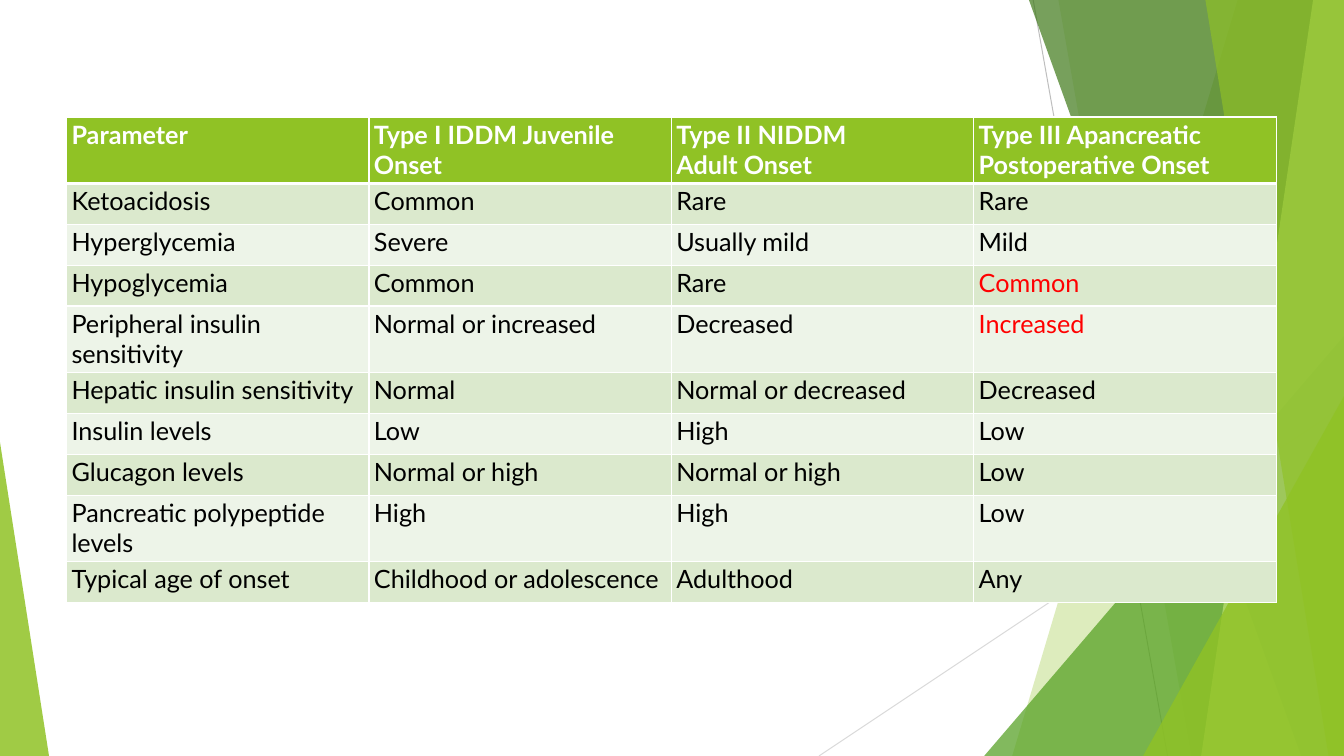
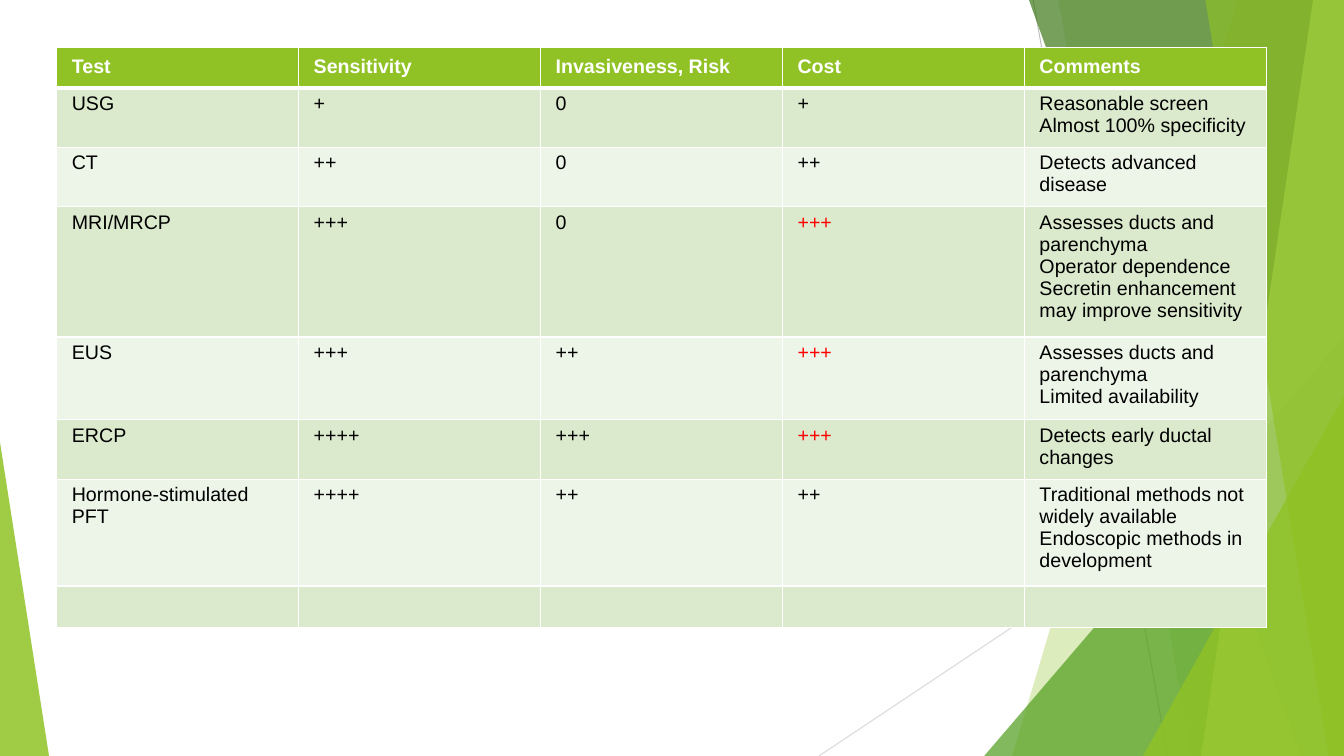
from dataclasses import dataclass

from lxml.etree import SubElement
from pptx import Presentation
from pptx.dml.color import RGBColor
from pptx.enum.shapes import MSO_CONNECTOR
from pptx.oxml.ns import qn
from pptx.util import Pt

SLIDE_WIDTH, SLIDE_HEIGHT = 960, 540
BLANK_LAYOUT = 6

WHITE = RGBColor(0xFF, 0xFF, 0xFF)
BLACK = RGBColor(0x00, 0x00, 0x00)
RED = RGBColor(0xFF, 0x00, 0x00)
GREEN = RGBColor(0x90, 0xC2, 0x25)
MID_GREEN = RGBColor(0x53, 0x9F, 0x20)
DARK_GREEN = RGBColor(0x3E, 0x78, 0x18)
LIME = RGBColor(0xC0, 0xE3, 0x74)
ODD_ROW = RGBColor(0xDB, 0xE9, 0xCD)
EVEN_ROW = RGBColor(0xED, 0xF4, 0xE8)
GRAY = RGBColor(0xBE, 0xBE, 0xBE)
LIGHT_GRAY = RGBColor(0xD9, 0xD9, 0xD9)

TOP_RIGHT, BOTTOM_RIGHT = (SLIDE_WIDTH, 0), (SLIDE_WIDTH, SLIDE_HEIGHT)

# Start, end, colour
BACKDROP_LINES = [
    ((738, 0), (834, 540), GRAY),
    ((960, 290), (585, 540), LIGHT_GRAY),
]

# Corners, colour, opacity in percent
BACKDROP_FACETS = [
    ([TOP_RIGHT, (884, 0), (723, 540), BOTTOM_RIGHT], GREEN, 30),
    ([TOP_RIGHT, (756, 0), (851, 540), BOTTOM_RIGHT], GREEN, 20),
    ([(960, 240), (703, 540), BOTTOM_RIGHT], MID_GREEN, 72),
    ([TOP_RIGHT, (735, 0), (929.5, 540), BOTTOM_RIGHT], DARK_GREEN, 70),
    ([TOP_RIGHT, (938, 0), (858, 540), BOTTOM_RIGHT], LIME, 70),
    ([TOP_RIGHT, (861, 0), (949, 540), BOTTOM_RIGHT], GREEN, 65),
    ([(960, 283), (816.5, 540), BOTTOM_RIGHT], GREEN, 80),
    ([(0, 316), (0, 540), (35, 540)], GREEN, 85),
]

DIABETES_TYPES = [
    ["Parameter", "Type I IDDM Juvenile Onset", "Type II NIDDM\vAdult Onset",
     "Type III Apancreatic Postoperative Onset"],
    ["Ketoacidosis", "Common", "Rare", "Rare"],
    ["Hyperglycemia", "Severe", "Usually mild", "Mild"],
    ["Hypoglycemia", "Common", "Rare", "Common"],
    ["Peripheral insulin\vsensitivity", "Normal or increased", "Decreased", "Increased"],
    ["Hepatic insulin sensitivity", "Normal", "Normal or decreased", "Decreased"],
    ["Insulin levels", "Low", "High", "Low"],
    ["Glucagon levels", "Normal or high", "Normal or high", "Low"],
    ["Pancreatic polypeptide levels", "High", "High", "Low"],
    ["Typical age of onset", "Childhood or adolescence", "Adulthood", "Any"],
]

PANCREATIC_TESTS = [
    ["Test", "Sensitivity", "Invasiveness, Risk", "Cost", "Comments"],
    ["USG", "+", "0", "+", "Reasonable screen\nAlmost 100% specificity"],
    ["CT", "++", "0", "++", "Detects advanced disease"],
    ["MRI/MRCP", "+++", "0", "+++",
     "Assesses ducts and parenchyma\nOperator dependence\n"
     "Secretin enhancement may improve sensitivity"],
    ["EUS", "+++", "++", "+++", "Assesses ducts and parenchyma\nLimited availability"],
    ["ERCP", "++++", "+++", "+++", "Detects early ductal changes"],
    ["Hormone-stimulated\vPFT", "++++", "++", "++",
     "Traditional methods not widely available\nEndoscopic methods in development"],
    ["", "", "", "", ""],
]


@dataclass
class TableStyle:
    font: str
    size: float
    indent: float
    header_gap: float
    body_gap: float


def add_backdrop_line(slide, start, end, color):
    line = slide.shapes.add_connector(
        MSO_CONNECTOR.STRAIGHT, *(Pt(value) for value in start + end))
    line.line.color.rgb = color
    line.line.width = Pt(0.72)
    SubElement(line.element.spPr, qn("a:effectLst"))
    return line


def add_facet(slide, corners, color, opacity):
    start, *others = [(Pt(x), Pt(y)) for x, y in corners]
    builder = slide.shapes.build_freeform(*start)
    builder.add_line_segments(others, close=True)
    facet = builder.convert_to_shape()
    facet.shadow.inherit = False
    facet.line.fill.background()
    facet.fill.solid()
    facet.fill.fore_color.rgb = color
    color_element = facet.element.spPr.find(qn("a:solidFill"))[0]
    SubElement(color_element, qn("a:alpha"), val=str(opacity * 1000))
    return facet


def move_backdrop_to_master(slide, master):
    """Draw the backdrop on a slide, then hand it to the master that all slides share."""
    parts = [add_backdrop_line(slide, *line) for line in BACKDROP_LINES]
    parts += [add_facet(slide, *facet) for facet in BACKDROP_FACETS]
    for position, part in enumerate(parts, start=2):
        master.shapes.element.insert(position, part.element)


def set_borders(cell, top, bottom):
    properties = cell._tc.get_or_add_tcPr()
    for side, width in (("L", 1), ("R", 1), ("T", top), ("B", bottom)):
        border = SubElement(properties, qn(f"a:ln{side}"), w=str(Pt(width)))
        fill = SubElement(border, qn("a:solidFill"))
        SubElement(fill, qn("a:srgbClr"), val=str(WHITE))


def fill_cell(cell, text, row, style, color):
    is_header = row == 0
    gap = Pt(style.header_gap if is_header else style.body_gap)
    cell.margin_left, cell.margin_top = Pt(style.indent), gap
    cell.margin_right = cell.margin_bottom = 0
    set_borders(cell, top=3 if row == 1 else 1, bottom=3 if is_header else 1)
    cell.fill.solid()
    cell.fill.fore_color.rgb = GREEN if is_header else ODD_ROW if row % 2 else EVEN_ROW
    cell.text_frame.text = text
    for paragraph in cell.text_frame.paragraphs:
        paragraph.font.name = style.font
        paragraph.font.size = Pt(style.size)
        paragraph.font.bold = is_header
        paragraph.font.color.rgb = color
    cell.text_frame.paragraphs[0].space_before = gap


def add_comparison(slide, content, left, top, heights, style, red_cells):
    """Add a table with a green header; red_cells holds (row, column) pairs."""
    columns = len(content[0])
    table = slide.shapes.add_table(
        len(content), columns, Pt(left), Pt(top), Pt(864), Pt(sum(heights))).table
    for column in table.columns:
        column.width = Pt(864 / columns)
    for row, (texts, height) in enumerate(zip(content, heights)):
        table.rows[row].height = Pt(height)
        for column, text in enumerate(texts):
            color = WHITE if row == 0 else RED if (row, column) in red_cells else BLACK
            fill_cell(table.cell(row, column), text, row, style, color)


def main():
    prs = Presentation()
    prs.slide_width, prs.slide_height = Pt(SLIDE_WIDTH), Pt(SLIDE_HEIGHT)
    blank = prs.slide_layouts[BLANK_LAYOUT]
    types_slide, tests_slide = (prs.slides.add_slide(blank) for _ in range(2))
    move_backdrop_to_master(types_slide, prs.slide_master)

    one_line, two_lines = 29.2, 47.5
    type_heights = [two_lines if row in (0, 4, 8) else one_line
                    for row in range(len(DIABETES_TYPES))]
    add_comparison(types_slide, DIABETES_TYPES, 47.5, 83.5, type_heights,
                   TableStyle("Lato", 18, 3.6, 1.8, 1.8), {(3, 3), (4, 3)})

    test_heights = [28.8, 42.5, 42.5, 92.9, 59.2, 42.5, 76.2, 29.5]
    add_comparison(tests_slide, PANCREATIC_TESTS, 40.5, 34, test_heights,
                   TableStyle("Arial", 14, 10.8, 5.8, 3.2), {(3, 3), (4, 3), (5, 3)})

    prs.save("out.pptx")


if __name__ == "__main__":
    main()
